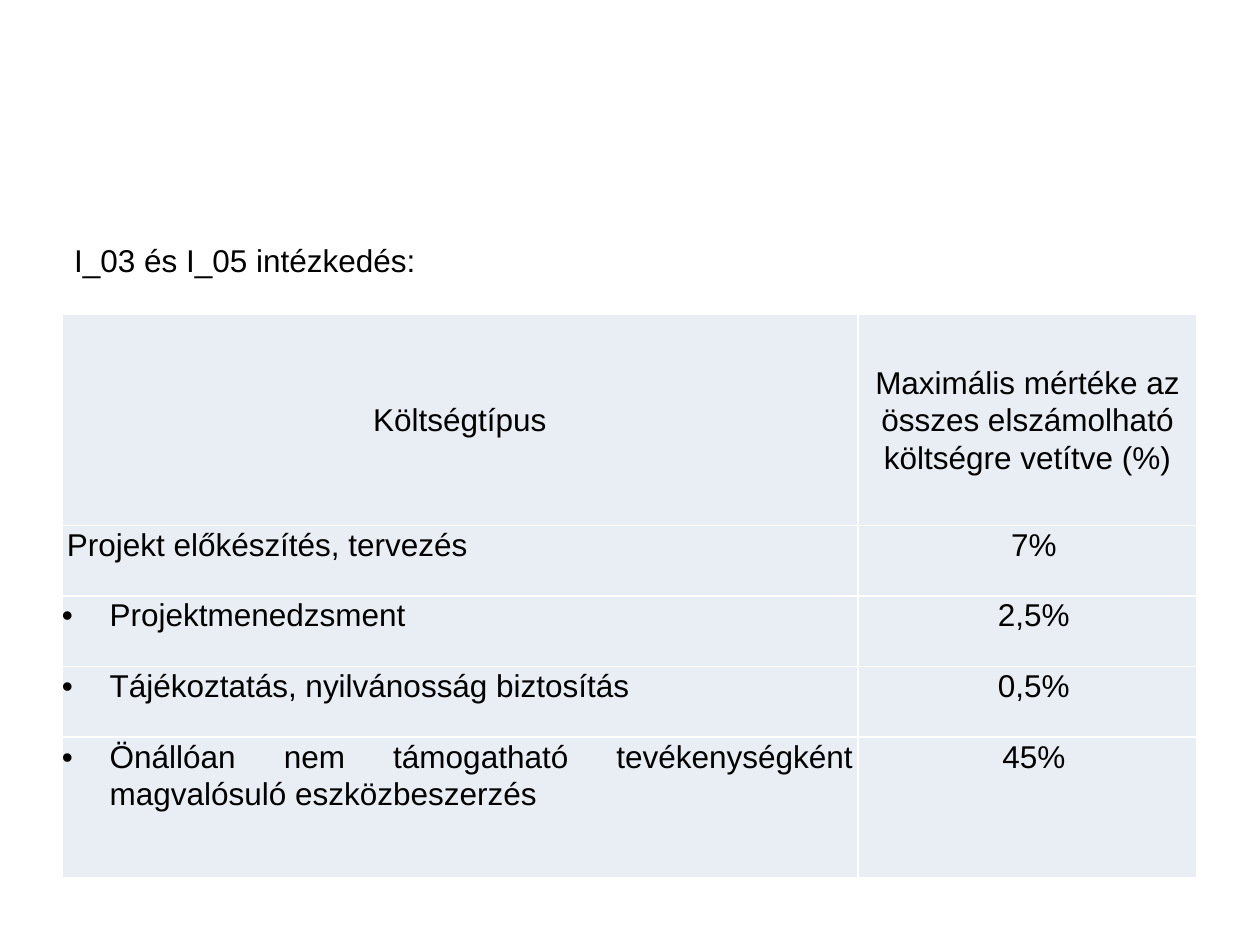
from lxml import etree
from pptx import Presentation
from pptx.dml.color import RGBColor
from pptx.enum.text import MSO_ANCHOR, PP_ALIGN
from pptx.oxml.ns import qn
from pptx.util import Inches, Pt

CENTER, JUSTIFY, LEFT = PP_ALIGN.CENTER, PP_ALIGN.JUSTIFY, PP_ALIGN.LEFT
MIDDLE, TOP = MSO_ANCHOR.MIDDLE, MSO_ANCHOR.TOP

HEADING = "I_03 és I_05 intézkedés:"
HEADER = ("Költségtípus",
          "Maximális mértéke az összes elszámolható költségre vetítve (%)")
COSTS = [
    # cost type, maximum share, bulleted
    ("Projekt előkészítés, tervezés", "7%", False),
    ("Projektmenedzsment", "2,5%", True),
    ("Tájékoztatás, nyilvánosság biztosítás", "0,5%", True),
    ("Önállóan nem támogatható tevékenységként magvalósuló eszközbeszerzés",
     "45%", True),
]
COLUMN_WIDTHS = (6.32, 2.69)
ROW_HEIGHTS = (1.68, 0.56, 0.56, 0.56, 1.12)
LEFT_EDGE = 0.49
CELL_FILL, BORDER, TEXT = "E9EDF4", "FFFFFF", "000000"


def color(value):
    return RGBColor.from_string(value)


def style_font(paragraph):
    paragraph.font.name = "Arial"
    paragraph.font.size = Pt(18)
    paragraph.font.bold = False
    paragraph.font.color.rgb = color(TEXT)


def add_borders(cell):
    properties = cell._tc.get_or_add_tcPr()
    for side in ("lnL", "lnR", "lnT", "lnB"):
        line = etree.SubElement(properties, qn(f"a:{side}"), w=str(Pt(1)))
        fill = etree.SubElement(line, qn("a:solidFill"))
        etree.SubElement(fill, qn("a:srgbClr"), val=BORDER)


def fill_cell(cell, text, alignment, indent, anchor=TOP, bulleted=False):
    cell.text = text
    cell.vertical_anchor = anchor
    cell.margin_left = cell.margin_right = cell.margin_top = cell.margin_bottom = 0
    add_borders(cell)
    cell.fill.solid()
    cell.fill.fore_color.rgb = color(CELL_FILL)

    paragraph = cell.text_frame.paragraphs[0]
    properties = paragraph._p.get_or_add_pPr()
    properties.set("marL", str(Inches(indent)))
    properties.set("marR", str(Inches(0.04)))
    properties.set("indent", str(Inches(-indent if bulleted else 0)))
    if bulleted:
        etree.SubElement(properties, qn("a:buFont"), typeface="Arial")
        etree.SubElement(properties, qn("a:buChar"), char="•")
    paragraph.alignment = alignment
    paragraph.line_spacing = 1.07
    style_font(paragraph)


presentation = Presentation()
presentation.slide_width, presentation.slide_height = Inches(10), Inches(7.5)
slide = presentation.slides.add_slide(presentation.slide_layouts[6])

table = slide.shapes.add_table(
    len(ROW_HEIGHTS), len(COLUMN_WIDTHS), Inches(LEFT_EDGE), Inches(2.49),
    Inches(sum(COLUMN_WIDTHS)), Inches(sum(ROW_HEIGHTS))).table
table.first_row = table.horz_banding = False
for column, width in zip(table.columns, COLUMN_WIDTHS):
    column.width = Inches(width)
for row, height in zip(table.rows, ROW_HEIGHTS):
    row.height = Inches(height)

for index, label in enumerate(HEADER):
    fill_cell(table.cell(0, index), label, CENTER, 0.04, MIDDLE)
for index, (cost_type, share, bulleted) in enumerate(COSTS, start=1):
    fill_cell(table.cell(index, 0), cost_type, JUSTIFY if bulleted else LEFT,
              0.38 if bulleted else 0.04, bulleted=bulleted)
    fill_cell(table.cell(index, 1), share, CENTER, 0.14)

heading = slide.shapes.add_textbox(
    Inches(LEFT_EDGE), Inches(1.86), Inches(4.35), Inches(0.71)).text_frame
heading.word_wrap = True
heading.text = HEADING
style_font(heading.paragraphs[0])

presentation.save("out.pptx")
